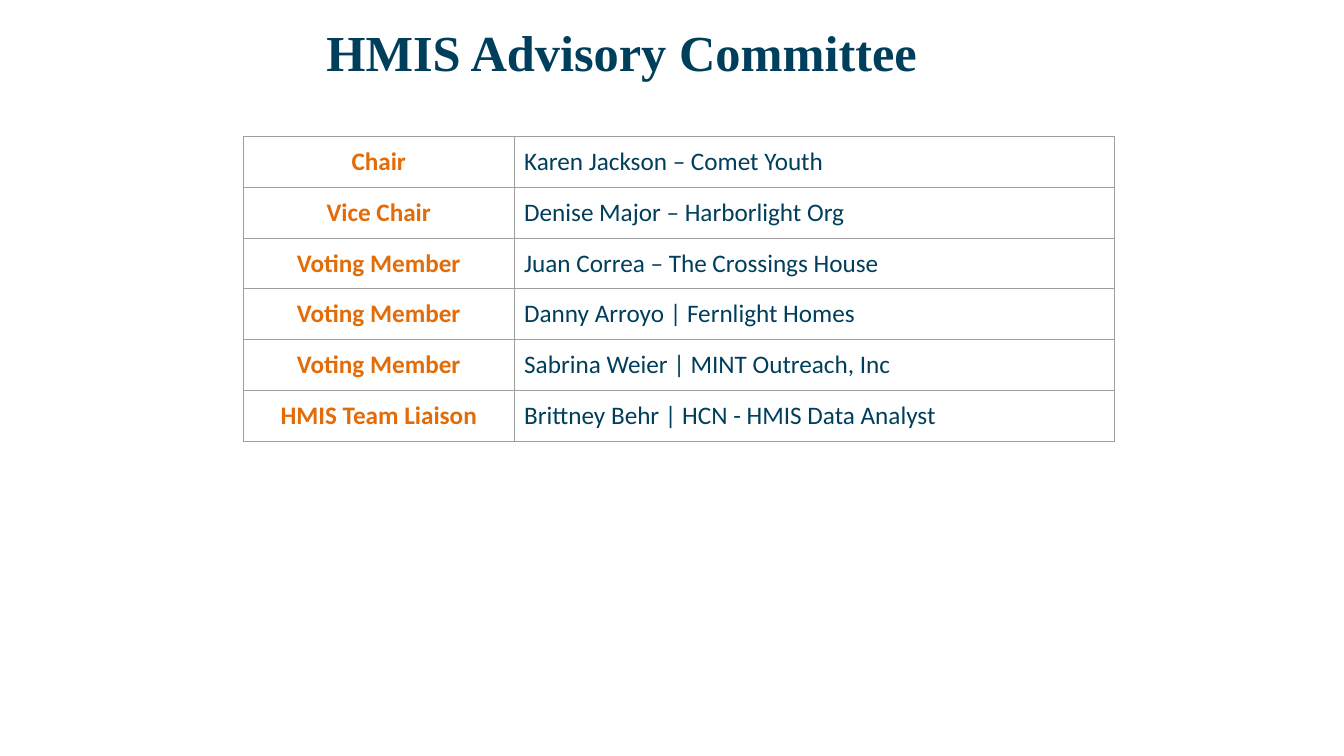
from lxml import etree
from pptx import Presentation
from pptx.dml.color import RGBColor
from pptx.enum import text
from pptx.oxml import ns
from pptx.util import Cm, Pt

NAVY = RGBColor(0x00, 0x3F, 0x5C)
ORANGE = RGBColor(0xE3, 0x6C, 0x09)
GREY = RGBColor(0x9E, 0x9E, 0x9E)

MEMBERS = [
    ("Chair", "Karen Jackson – Comet Youth"),
    ("Vice Chair", "Denise Major – Harborlight Org"),
    ("Voting Member", "Juan Correa – The Crossings House"),
    ("Voting Member", "Danny Arroyo | Fernlight Homes"),
    ("Voting Member", "Sabrina Weier | MINT Outreach, Inc"),
    ("HMIS Team Liaison", "Brittney Behr | HCN - HMIS Data Analyst"),
]
COLUMN_WIDTHS = (Cm(6.83), Cm(15.13))
ROW_HEIGHT = Cm(1.28)


def style_paragraph(paragraph, font_name, size, color, bold, align):
    paragraph.alignment = align
    for run in paragraph.runs:
        run.font.name = font_name
        run.font.size = Pt(size)
        run.font.bold = bold
        run.font.color.rgb = color


def add_title(slide, wording):
    title = slide.shapes.title
    title.left, title.top, title.width, title.height = Cm(4.24), Cm(0), Cm(22.86), Cm(2.59)
    frame = title.text_frame
    frame.text = wording
    frame.vertical_anchor = text.MSO_ANCHOR.MIDDLE
    style_paragraph(frame.paragraphs[0], "Times New Roman", 36, NAVY, True,
                    text.PP_ALIGN.CENTER)


def add_borders(cell):
    """Draw a thin grey line on all four sides; lines go before the cell's fill."""
    properties = cell._tc.get_or_add_tcPr()
    for position, side in enumerate(("lnL", "lnR", "lnT", "lnB")):
        line = etree.Element(ns.qn(f"a:{side}"), w=str(Pt(0.75)))
        fill = etree.SubElement(line, ns.qn("a:solidFill"))
        etree.SubElement(fill, ns.qn("a:srgbClr"), val=str(GREY))
        properties.insert(position, line)


def fill_cell(cell, wording, color, bold, align):
    cell.text_frame.text = wording
    cell.margin_left = cell.margin_right = Cm(0.25)
    cell.margin_top = cell.margin_bottom = Cm(0.25)
    cell.fill.background()
    add_borders(cell)
    style_paragraph(cell.text_frame.paragraphs[0], "Calibri", 18, color, bold, align)


def add_member_table(slide, members):
    table = slide.shapes.add_table(
        len(members), len(COLUMN_WIDTHS), Cm(6.13), Cm(3.44),
        sum(COLUMN_WIDTHS), ROW_HEIGHT * len(members)).table
    table.first_row = table.horz_banding = False
    for column, width in zip(table.columns, COLUMN_WIDTHS):
        column.width = width
    for row, (role, member) in zip(table.rows, members):
        row.height = ROW_HEIGHT
        fill_cell(row.cells[0], role, ORANGE, True, text.PP_ALIGN.CENTER)
        fill_cell(row.cells[1], member, NAVY, False, text.PP_ALIGN.LEFT)


def main():
    deck = Presentation()
    deck.slide_width, deck.slide_height = Cm(33.87), Cm(19.05)
    slide = deck.slides.add_slide(deck.slide_layouts[5])
    add_title(slide, "HMIS Advisory Committee")
    add_member_table(slide, MEMBERS)
    deck.save("out.pptx")


if __name__ == "__main__":
    main()
